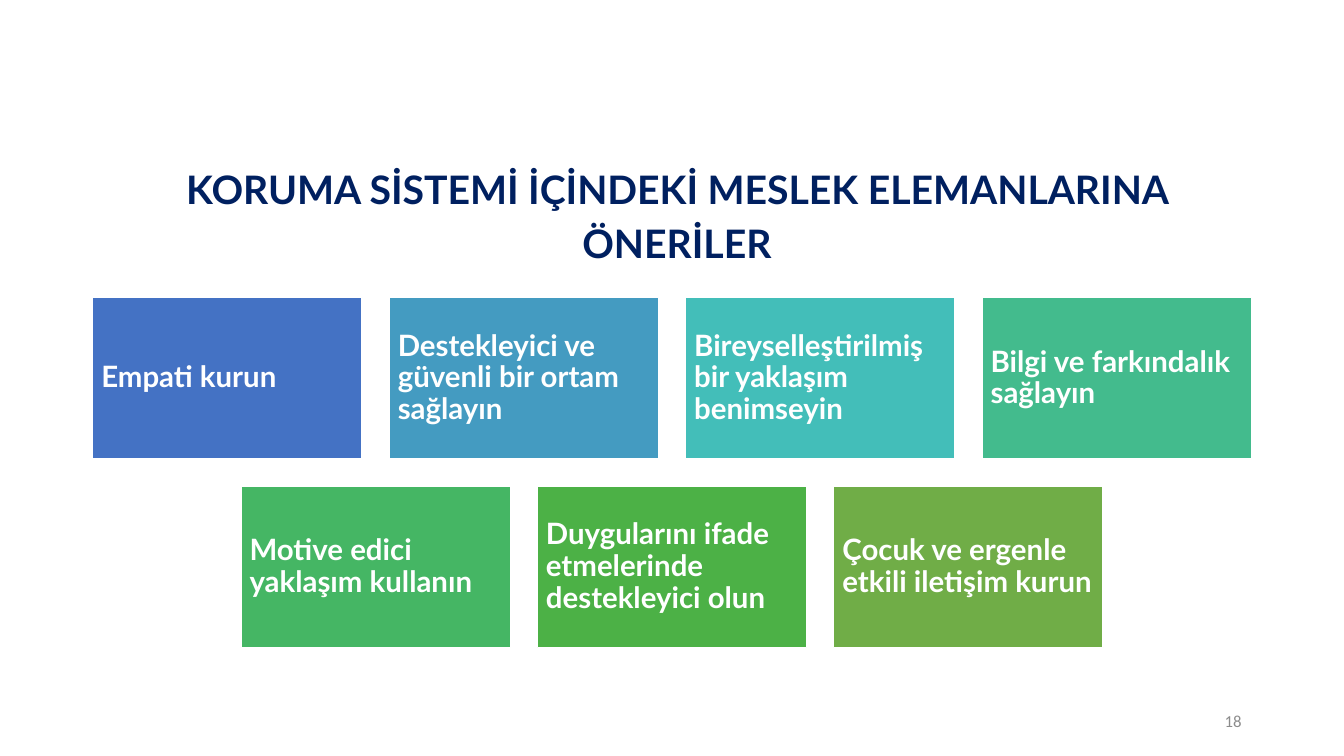
from pptx import Presentation
from pptx.dml.color import RGBColor
from pptx.enum.shapes import MSO_SHAPE as Shape
from pptx.enum.text import MSO_ANCHOR as Anchor, PP_ALIGN as Align
from pptx.util import Cm, Pt


def color(value):
    return RGBColor.from_string(value)


def write(box, text, size, ink, font="Lato", bold=True, align=Align.LEFT,
          spacing=1.0, inset=0.25, indent=0):
    frame = box.text_frame
    frame.word_wrap = True
    frame.vertical_anchor = Anchor.MIDDLE
    frame.margin_left = frame.margin_right = Cm(inset)
    frame.margin_top = frame.margin_bottom = Cm(min(inset, 0.23))
    line = frame.paragraphs[0]
    line.alignment = align
    line.line_spacing = spacing
    if indent:
        line._p.get_or_add_pPr().set("marL", str(Cm(indent)))
    run = line.add_run()
    run.text = text
    run.font.name = font
    run.font.size = Pt(size)
    run.font.bold = bold
    run.font.color.rgb = color(ink)


SLIDE_WIDTH = 33.87
deck = Presentation()
deck.slide_width = Cm(SLIDE_WIDTH)
deck.slide_height = Cm(19.05)
slide = deck.slides.add_slide(deck.slide_layouts[6])

heading = slide.shapes.add_textbox(Cm(2.33), Cm(3.5), Cm(29.21), Cm(3.68))
write(heading, "KORUMA SİSTEMİ İÇİNDEKİ MESLEK ELEMANLARINA ÖNERİLER", 28, "002060",
      align=Align.CENTER, spacing=1.15, indent=0.25)

advice_rows = [
    [("Empati kurun", "4472C4"),
     ("Destekleyici ve güvenli bir ortam sağlayın", "449BC1"),
     ("Bireyselleştirilmiş bir yaklaşım benimseyin", "43BEB9"),
     ("Bilgi ve farkındalık sağlayın", "43BB8D")],
    [("Motive edici yaklaşım kullanın", "45B664"),
     ("Duygularını ifade etmelerinde destekleyici olun", "4CB146"),
     ("Çocuk ve ergenle etkili iletişim kurun", "70AD47")],
]
TOP, WIDTH, HEIGHT, GAP = 7.5, 6.79, 4.07, 0.68

for row, advices in enumerate(advice_rows):
    row_width = len(advices) * (WIDTH + GAP) - GAP
    left = (SLIDE_WIDTH - row_width) / 2
    for column, (advice, fill) in enumerate(advices):
        card = slide.shapes.add_shape(
            Shape.RECTANGLE, Cm(left + column * (WIDTH + GAP)),
            Cm(TOP + row * (HEIGHT + GAP)), Cm(WIDTH), Cm(HEIGHT))
        card.shadow.inherit = False
        card.fill.solid()
        card.fill.fore_color.rgb = color(fill)
        card.line.color.rgb = color("FFFFFF")
        card.line.width = Pt(1)
        write(card, advice, 21, "FFFFFF", spacing=0.9, inset=0.22)

page_number = slide.shapes.add_textbox(Cm(23.92), Cm(17.66), Cm(7.62), Cm(1.01))
write(page_number, "18", 12, "8C8C8C", font="Calibri", bold=False, align=Align.RIGHT)

deck.save("out.pptx")
